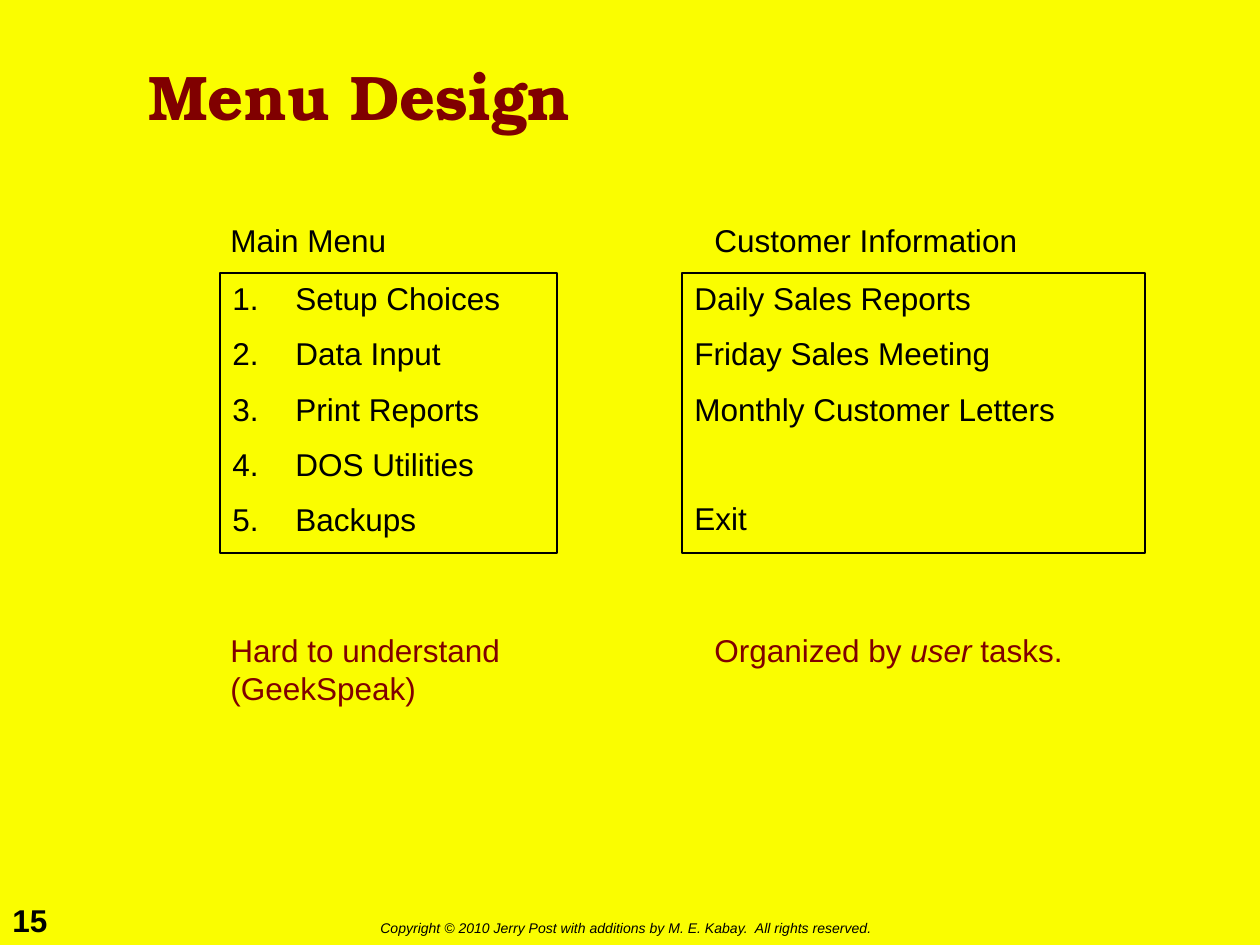
from dataclasses import dataclass

from lxml import etree
from pptx import Presentation
from pptx import util as u
from pptx.dml.color import RGBColor
from pptx.enum import shapes, text
from pptx.oxml.ns import qn

PX = 914400 / 126


@dataclass(frozen=True)
class Theme:
    background: RGBColor = RGBColor.from_string("FAFD00")
    ink: RGBColor = RGBColor.from_string("000000")
    accent: RGBColor = RGBColor.from_string("800000")
    heading: str = "TeX Gyre Bonum"
    body: str = "Arial"
    title_size: int = 36
    body_size: int = 18
    footer_size: int = 8
    item_gap: int = 10
    group_gap: int = 41


theme = Theme()


def box(*px):
    return [round(v * PX) for v in px]


def style(p, size=theme.body_size, color=theme.ink, name=theme.body, bold=False, italic=False):
    f = p.font
    f.size, f.name, f.bold, f.italic = u.Pt(size), name, bold, italic
    f.color.rgb = color


prs = Presentation()
prs.slide_width, prs.slide_height = box(1260, 945)
s = prs.slides.add_slide(prs.slide_layouts[5])
s.background.fill.solid()
s.background.fill.fore_color.rgb = theme.background

# Title
title = s.shapes.title
title.left, title.top, title.width, title.height = box(136, 21, 987, 158)
tf = title.text_frame
tf.vertical_anchor = text.MSO_ANCHOR.MIDDLE
p = tf.paragraphs[0]
p.text = "Menu Design"
p.alignment = text.PP_ALIGN.LEFT
p.line_spacing = 0.9
style(p, theme.title_size, theme.accent, theme.heading, bold=True)

# Menus: each item is (text, space before)
gap = theme.item_gap
system_items = ["Setup Choices", "Data Input", "Print Reports", "DOS Utilities", "Backups"]
menus = [
    (220, 337, [(f"{n}.\t{item}", gap) for n, item in enumerate(system_items, 1)]),
    (682, 463, [("Daily Sales Reports", gap), ("Friday Sales Meeting", gap),
                ("Monthly Customer Letters", gap), ("Exit", theme.group_gap)]),
]
for left, width, items in menus:
    sp = s.shapes.add_shape(shapes.MSO_SHAPE.RECTANGLE, *box(left, 273, width, 280))
    sp.shadow.inherit = False
    sp.fill.background()
    sp.line.color.rgb = theme.ink
    sp.line.width = u.Pt(1)
    tf = sp.text_frame
    tf.vertical_anchor = text.MSO_ANCHOR.TOP
    for i, (item, before) in enumerate(items):
        p = tf.add_paragraph() if i else tf.paragraphs[0]
        p.text = item
        p.alignment = text.PP_ALIGN.LEFT
        if i:
            p.space_before = u.Pt(before)
        if "\t" in item:
            tabs = etree.SubElement(p._p.get_or_add_pPr(), qn("a:tabLst"))
            etree.SubElement(tabs, qn("a:tab"), pos=str(u.Inches(0.5)), algn="l")
        style(p)

# Menu headings, remarks and footer: position, runs as (text, italic), paragraph style
labels = [
    ((218, 215, 181, 50), [("Main Menu", False)], {}),
    ((702, 215, 328, 50), [("Customer Information", False)], {}),
    ((218, 625, 295, 88), [("Hard to understand\v(GeekSpeak)", False)], {"color": theme.accent}),
    ((702, 625, 374, 50), [("Organized by ", False), ("user", True), (" tasks.", False)],
     {"color": theme.accent}),
    ((0, 895, 64, 50), [("15", False)], {"bold": True}),
    ((368, 913, 532, 30),
     [("Copyright © 2010 Jerry Post with additions by M. E. Kabay.  All rights reserved.", True)],
     {"size": theme.footer_size, "italic": True}),
]
for place, runs, look in labels:
    tf = s.shapes.add_textbox(*box(*place)).text_frame
    tf.word_wrap = False
    p = tf.paragraphs[0]
    if len(runs) == 1:
        p.text = runs[0][0]
    else:
        for words, italic in runs:
            r = p.add_run()
            r.text = words
            r.font.italic = italic
    style(p, **look)

prs.save("out.pptx")
